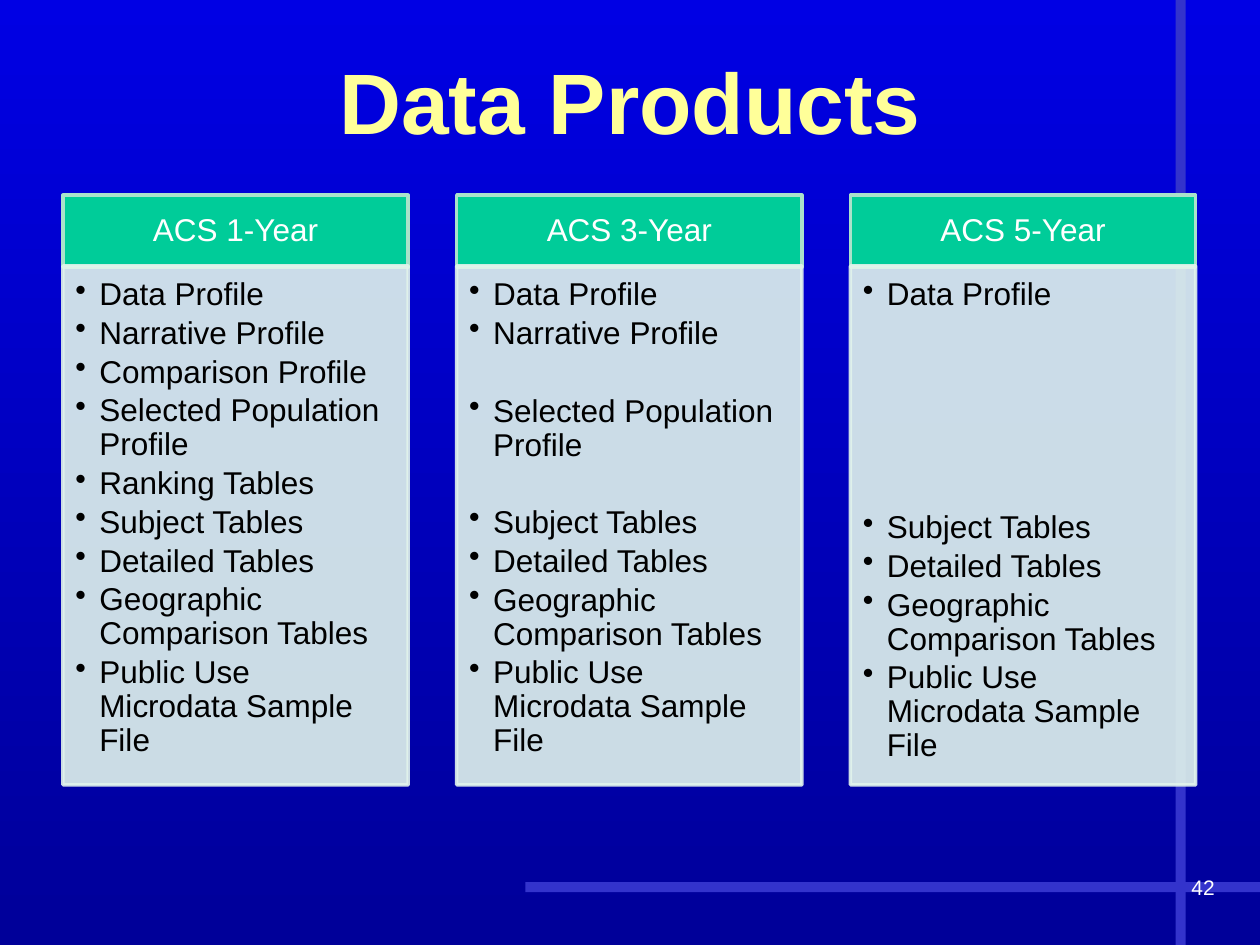
from pptx import Presentation
from pptx.dml.color import RGBColor
from pptx.enum.shapes import MSO_SHAPE as Shape
from pptx.enum.text import MSO_ANCHOR as Anchor, PP_ALIGN as Align
from pptx.oxml.ns import qn
from pptx.util import Inches, Pt
from lxml import etree


def rgb(value):
    return RGBColor.from_string(value)


def write(frame, text, size=18, color="FFFFFF", bold=False, align=Align.LEFT,
          anchor=Anchor.TOP, margins=(0.1, 0.05, 0.1, 0.05), line=None,
          after=0, bullet=False, gaps=None):
    """Fill a text frame, one paragraph per line; gaps maps a line to its space before."""
    frame.word_wrap = True
    frame.vertical_anchor = anchor
    (frame.margin_left, frame.margin_top,
     frame.margin_right, frame.margin_bottom) = map(Inches, margins)
    frame.text = text
    for paragraph in frame.paragraphs:
        paragraph.alignment = align
        paragraph.line_spacing = line
        paragraph.space_before = Pt((gaps or {}).get(paragraph.text, 0))
        paragraph.space_after = Pt(after)
        if bullet:
            paragraph.level = 1
            props = paragraph._p.get_or_add_pPr()
            props.set("marL", str(Inches(0.19)))
            props.set("indent", str(Inches(-0.19)))
            etree.SubElement(props, qn("a:buChar")).set("char", "•")
        font = paragraph.font
        font.name, font.size, font.bold = "Arial", Pt(size), bold
        font.color.rgb = rgb(color)


prs = Presentation()
prs.slide_width, prs.slide_height = Inches(10), Inches(7.5)
slide = prs.slides.add_slide(prs.slide_layouts[5])

# Background gradient, top to bottom
background = slide.background.fill
background.gradient()
background.gradient_angle = 270
for stop, color, position in zip(background.gradient_stops, ("0000E4", "000099"), (0, 1)):
    stop.color.rgb = rgb(color)
    stop.position = position

# Crossing bars
for box in ((4.17, 7, 5.83, 0.08), (9.33, 0, 0.08, 7.5)):
    bar = slide.shapes.add_shape(Shape.RECTANGLE, *map(Inches, box))
    bar.shadow.inherit = False
    bar.fill.solid()
    bar.fill.fore_color.rgb = rgb("3333CC")
    bar.line.fill.background()

# Title
title = slide.shapes.title
title.left, title.top, title.width, title.height = map(Inches, (0.5, 0.17, 9, 1.25))
write(title.text_frame, "Data Products", size=49, color="FFFF99", bold=True,
      align=Align.CENTER, anchor=Anchor.MIDDLE)

# Product columns: a header above a list, with products aligned across columns
products = ["Data Profile", "Narrative Profile", "Comparison Profile",
            "Selected Population Profile", "Ranking Tables", "Subject Tables",
            "Detailed Tables", "Geographic Comparison Tables",
            "Public Use Microdata Sample File"]
row = 22.2
columns = [
    ("ACS 1-Year", [], {}),
    ("ACS 3-Year", ["Comparison Profile", "Ranking Tables"],
     {"Selected Population Profile": row, "Subject Tables": row}),
    ("ACS 5-Year", products[1:5], {"Subject Tables": 5 * row}),
]
for index, (release, missing, gaps) in enumerate(columns):
    left = 0.5 + 3.125 * index
    offered = "\n".join(name for name in products if name not in missing)
    header_format = dict(align=Align.CENTER, anchor=Anchor.MIDDLE, line=0.9,
                         margins=(0.14, 0.08, 0.14, 0.08))
    list_format = dict(color="000000", line=0.9, after=2.7, bullet=True, gaps=gaps,
                       margins=(0.1, 0.1, 0.14, 0.16))
    for top, height, fill, edge, alpha, text, style in (
            (1.55, 0.57, "00CC99", "AAE2CA", 100, release, header_format),
            (2.11, 4.12, "E2F4EC", "E2F4EC", 90, offered, list_format)):
        panel = slide.shapes.add_shape(Shape.RECTANGLE, Inches(left), Inches(top),
                                       Inches(2.74), Inches(height))
        panel.shadow.inherit = False
        panel.fill.solid()
        panel.fill.fore_color.rgb = rgb(fill)
        panel.line.color.rgb = rgb(edge)
        panel.line.width = Pt(2)
        if alpha < 100:
            for tint in panel._element.spPr.iter(qn("a:srgbClr")):
                etree.SubElement(tint, qn("a:alpha")).set("val", str(alpha * 1000))
        write(panel.text_frame, text, **style)

# Page number
page_number = slide.shapes.add_textbox(*map(Inches, (6.57, 6.89, 3.17, 0.4)))
write(page_number.text_frame, "42", size=12, align=Align.RIGHT)

prs.save("out.pptx")
